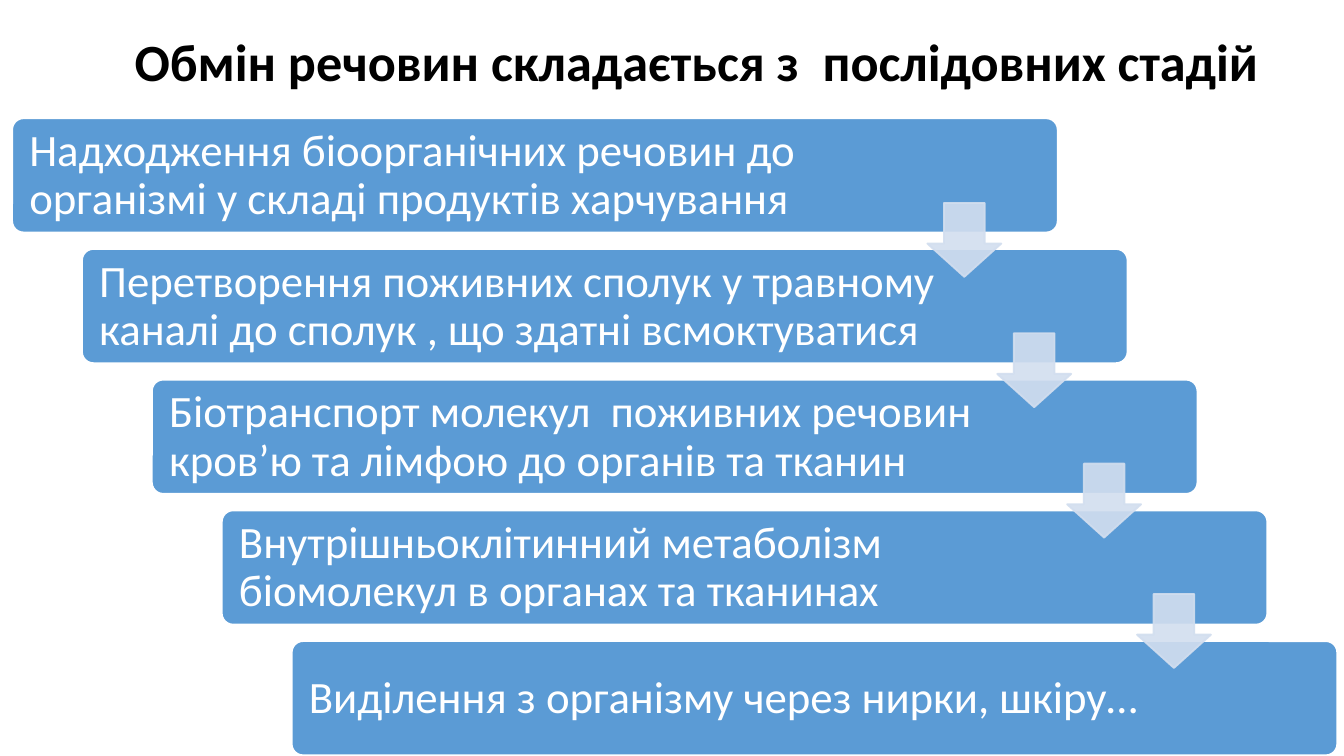
from dataclasses import dataclass

from lxml import etree
from pptx import Presentation
from pptx import util as u
from pptx.dml import color
from pptx.enum import shapes, text
from pptx.oxml import ns


@dataclass(frozen=True)
class Theme:
    font: str = "Calibri"
    title_size: int = 28
    body_size: int = 24
    dark: str = "000000"
    light: str = "FFFFFF"
    step: str = "5B9BD5"
    arrow: str = "D2DEEF"
    arrow_alpha: int = 90


@dataclass(frozen=True)
class Stage:
    label: str
    text_width: float = 6.53


THEME = Theme()
TITLE = "Обмін речовин складається з  послідовних стадій"
STAGES = [
    Stage("Надходження біоорганічних речовин до організмі у складі продуктів харчування", 6.64),
    Stage("Перетворення поживних сполук у травному каналі до сполук , що здатні всмоктуватися"),
    Stage("Біотранспорт молекул  поживних речовин кров’ю та лімфою до органів та тканин"),
    Stage("Внутрішньоклітинний метаболізм біомолекул в органах та тканинах"),
    Stage("Виділення з організму через нирки, шкіру…"),
]
LEFT, TOP, LAST_TOP = 0.09, 0.88, 4.77
STEP_X = 0.52
STEP_Y = (LAST_TOP - TOP) / (len(STAGES) - 1)
STEP_WIDTH, STEP_HEIGHT = 7.78, 0.85
TEXT_LEFT, TEXT_TOP, TEXT_HEIGHT = 0.12, 0.91, 0.8
ARROW_LEFT, ARROW_TOP, ARROW_SIZE = 6.9, 1.51, 0.55
ARROW_STEP_Y = 0.97


def rgb(value: str) -> color.RGBColor:
    return color.RGBColor.from_string(value)


def add_span(para, words: str, size: int, colour: str, bold: bool = False) -> None:
    span = para.add_run()
    span.text = words
    span.font.name = THEME.font
    span.font.size = u.Pt(size)
    span.font.bold = bold
    span.font.color.rgb = rgb(colour)


def add_block(page, kind, left: float, top: float, width: float, height: float,
              adjustments: list[float], fill: str, line: str):
    block = page.shapes.add_shape(kind, u.Inches(left), u.Inches(top),
                                  u.Inches(width), u.Inches(height))
    for index, value in enumerate(adjustments):
        block.adjustments[index] = value
    block.shadow.inherit = False
    block.fill.solid()
    block.fill.fore_color.rgb = rgb(fill)
    block.line.color.rgb = rgb(line)
    block.line.width = u.Pt(1)
    return block


def add_title(page) -> None:
    title = page.shapes.title
    title.left, title.top = u.Inches(0.28), u.Inches(0.17)
    title.width, title.height = u.Inches(9.8), u.Inches(0.57)
    title.text_frame.vertical_anchor = text.MSO_ANCHOR.TOP
    para = title.text_frame.paragraphs[0]
    para.alignment = text.PP_ALIGN.CENTER
    add_span(para, TITLE, THEME.title_size, THEME.dark, bold=True)


def add_stage(page, stage: Stage, index: int) -> None:
    shift_x, shift_y = index * STEP_X, index * STEP_Y
    add_block(page, shapes.MSO_SHAPE.ROUNDED_RECTANGLE, LEFT + shift_x, TOP + shift_y,
              STEP_WIDTH, STEP_HEIGHT, [0.1], THEME.step, THEME.light)
    box = page.shapes.add_textbox(
        u.Inches(TEXT_LEFT + shift_x), u.Inches(TEXT_TOP + shift_y),
        u.Inches(stage.text_width), u.Inches(TEXT_HEIGHT))
    frame = box.text_frame
    frame.word_wrap = True
    frame.vertical_anchor = text.MSO_ANCHOR.MIDDLE
    frame.margin_left = frame.margin_right = u.Inches(0.1)
    frame.margin_top = frame.margin_bottom = u.Inches(0.1)
    para = frame.paragraphs[0]
    para.line_spacing = 0.9
    add_span(para, stage.label, THEME.body_size, THEME.light)


def add_arrow(page, index: int) -> None:
    """Draw the translucent arrow that leads from one stage to the next."""
    arrow = add_block(page, shapes.MSO_SHAPE.DOWN_ARROW,
                      ARROW_LEFT + index * STEP_X, ARROW_TOP + index * ARROW_STEP_Y,
                      ARROW_SIZE, ARROW_SIZE, [0.55, 0.45], THEME.arrow, THEME.arrow)
    for colour in arrow.element.spPr.iter(ns.qn("a:srgbClr")):
        etree.SubElement(colour, ns.qn("a:alpha"), val=str(THEME.arrow_alpha * 1000))


def main() -> None:
    deck = Presentation()
    deck.slide_width = u.Inches(10)
    deck.slide_height = deck.slide_width * 9 // 16
    page = deck.slides.add_slide(deck.slide_layouts[5])
    for index, stage in enumerate(STAGES):
        add_stage(page, stage, index)
    for index in range(len(STAGES) - 1):
        add_arrow(page, index)
    add_title(page)
    deck.save("out.pptx")


if __name__ == "__main__":
    main()
